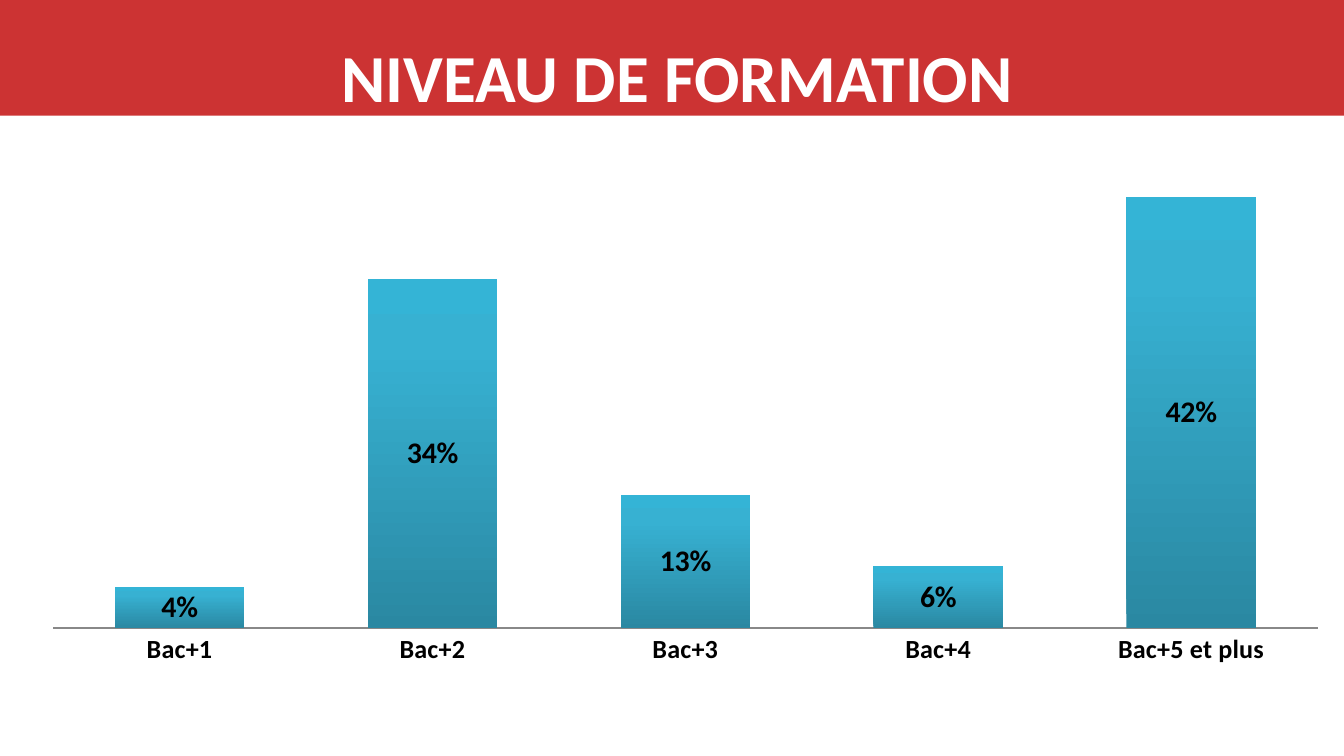
from copy import deepcopy

from pptx import Presentation
from pptx.chart.data import CategoryChartData
from pptx.dml.color import RGBColor
from pptx.enum.chart import XL_CHART_TYPE, XL_LABEL_POSITION, XL_TICK_LABEL_POSITION, XL_TICK_MARK
from pptx.enum.shapes import MSO_SHAPE
from pptx.enum.text import MSO_ANCHOR, PP_ALIGN
from pptx.oxml import parse_xml
from pptx.oxml.ns import nsdecls, qn
from pptx.util import Inches, Pt

WIDE = Inches(10)
HIGH = WIDE * 9 // 16
LEVELS = {"Bac+1": 0.04, "Bac+2": 0.34, "Bac+3": 0.13, "Bac+4": 0.06, "Bac+5 et plus": 0.42}
STOPS = [(0, "2A88A2"), (0.8, "37B1D2"), (1, "34B4D6")]
PLOT = {"x": 0.02, "y": 0.02, "w": 0.96, "h": 0.89}


def paint(color, value):
    color.rgb = RGBColor.from_string(value)


def share(left, top, width, height):
    """Turn shares of the slide into lengths."""
    return int(left * WIDE), int(top * HIGH), int(width * WIDE), int(height * HIGH)


def style(font, size, color):
    for name, value in {"name": "Calibri", "size": Pt(size), "bold": True}.items():
        setattr(font, name, value)
    paint(font.color, color)


def add_band(slide):
    band = slide.shapes.add_shape(MSO_SHAPE.RECTANGLE, *share(0, 0, 1, 0.153))
    band.shadow.inherit = False
    band.fill.solid()
    paint(band.fill.fore_color, "CC3333")
    band.line.fill.background()
    slide.shapes._spTree.insert(2, band._element)  # behind the title


def set_title(slide, text):
    title = slide.shapes.title
    title.left, title.top, title.width, title.height = share(0.185, 0.037, 0.638, 0.127)
    frame = title.text_frame
    frame.text = text
    frame.vertical_anchor = MSO_ANCHOR.MIDDLE
    line = frame.paragraphs[0]
    line.alignment = PP_ALIGN.CENTER
    style(line.runs[0].font, 36, "FFFFFF")


def shade(series):
    """Fill the bars with a gradient, dark at the foot."""
    fill = series.format.fill
    fill.gradient()
    fill.gradient_angle = 90
    stops = next(series._element.iter(qn("a:gsLst")))
    stops.append(deepcopy(stops[-1]))
    for stop, (place, color) in zip(fill.gradient_stops, STOPS):
        stop.position = place
        paint(stop.color, color)


def set_axes(chart):
    base, scale = chart.category_axis, chart.value_axis
    base.major_tick_mark = base.minor_tick_mark = XL_TICK_MARK.NONE
    base.tick_label_position = XL_TICK_LABEL_POSITION.NEXT_TO_AXIS
    style(base.tick_labels.font, 14, "000000")
    base.format.line.width = Pt(0.75)
    paint(base.format.line.color, "888888")
    limits = {"visible": False, "has_major_gridlines": False,
              "minimum_scale": 0, "maximum_scale": 0.45}
    for name, value in limits.items():
        setattr(scale, name, value)


def set_labels(series):
    labels = series.data_labels
    options = {"show_value": True, "number_format": "0%",
               "number_format_is_linked": False, "position": XL_LABEL_POSITION.CENTER}
    for name, value in options.items():
        setattr(labels, name, value)
    style(labels.font, 16, "000000")


def place_plot(chart):
    """Fix the inner plot area as shares of the chart."""
    modes = "".join(f'<c:{key}Mode val="edge"/>' for key in "xy")
    sizes = "".join(f'<c:{key} val="{value}"/>' for key, value in PLOT.items())
    layout = parse_xml(f'<c:layout {nsdecls("c")}><c:manualLayout><c:layoutTarget val="inner"/>'
                       f'{modes}{sizes}</c:manualLayout></c:layout>')
    area = chart._chartSpace.chart.plotArea
    for old in area.findall(qn("c:layout")):
        area.remove(old)
    area.insert(0, layout)


def add_bars(slide):
    data = CategoryChartData(number_format="0%")
    data.categories = list(LEVELS)
    data.add_series("Series 1", list(LEVELS.values()))
    spot = share(0.02, 0.206, 0.98, 0.687)
    chart = slide.shapes.add_chart(XL_CHART_TYPE.COLUMN_STACKED, *spot, data).chart
    chart.has_legend = chart.has_title = False
    style(chart.font, 14, "000000")
    plot = chart.plots[0]
    for name, value in {"gap_width": 95, "overlap": 100, "vary_by_categories": False}.items():
        setattr(plot, name, value)
    shade(plot.series[0])
    set_labels(plot.series[0])
    set_axes(chart)
    place_plot(chart)


def main():
    deck = Presentation()
    deck.slide_width, deck.slide_height = WIDE, HIGH
    slide = deck.slides.add_slide(deck.slide_layouts[5])
    add_band(slide)
    set_title(slide, "NIVEAU DE FORMATION")
    add_bars(slide)
    deck.save("out.pptx")


if __name__ == "__main__":
    main()
